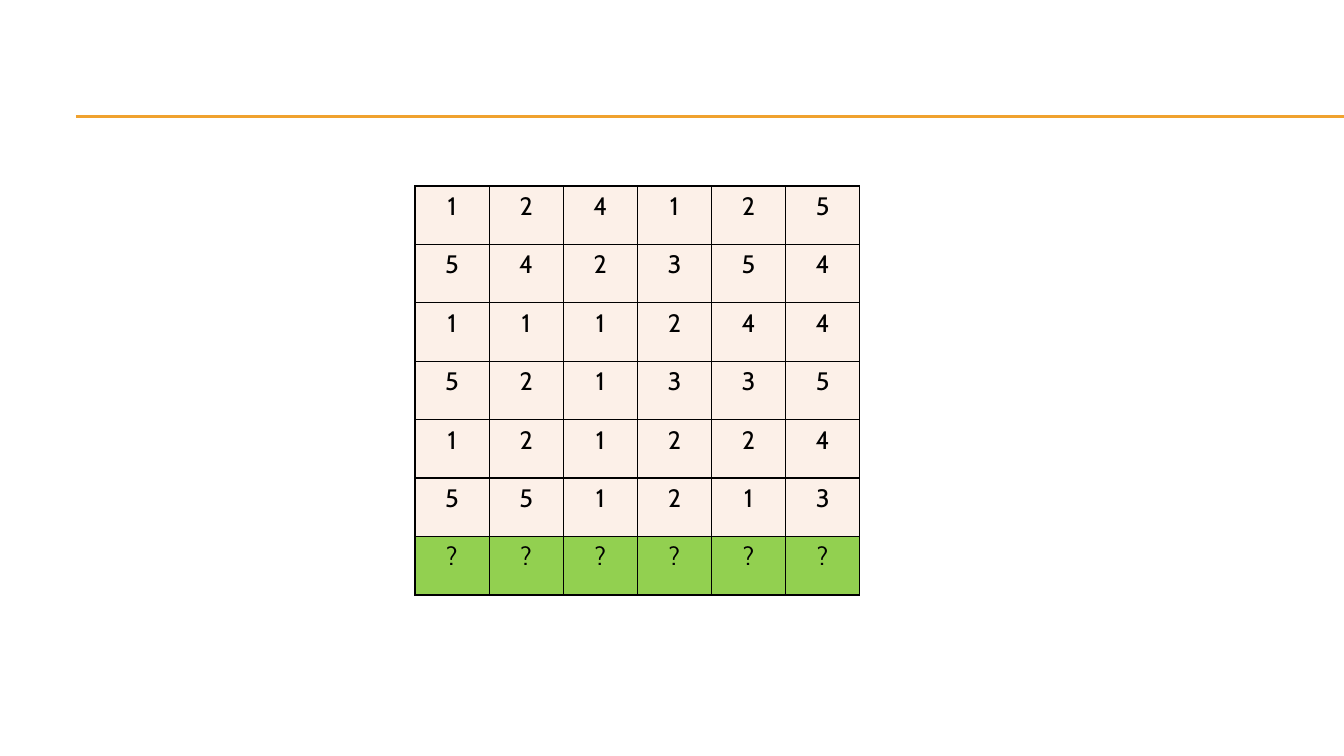
from dataclasses import dataclass

import pptx
import pptx.dml.color
import pptx.enum.shapes
import pptx.enum.text
import pptx.oxml
import pptx.oxml.ns
import pptx.shapes.connector
import pptx.slide
import pptx.table
import pptx.util

EMU_PER_PX = 914400 / 100.8
SLIDE_W, SLIDE_H = 1344, 756
COLORS = {"rule": "F0A22E", "ink": "000000", "data": "FCF0E8", "unknown": "92D050"}
FONT = "Cabin"


@dataclass(frozen=True)
class Rule:
    left: int
    right: int
    y: int


@dataclass(frozen=True)
class Row:
    values: str
    fill: str = "data"


RULES = [Rule(76, SLIDE_W, 116), Rule(76, SLIDE_W, 117)]
ROWS = [
    Row("124125"),
    Row("542354"),
    Row("111244"),
    Row("521335"),
    Row("121224"),
    Row("551213"),
    Row("??????", "unknown"),
]


def px(n: int) -> pptx.util.Emu:
    return pptx.util.Emu(round(n * EMU_PER_PX))


def rgb(name: str) -> pptx.dml.color.RGBColor:
    return pptx.dml.color.RGBColor.from_string(COLORS[name])


def draw_rule(slide: pptx.slide.Slide, rule: Rule) -> pptx.shapes.connector.Connector:
    sp = slide.shapes.add_connector(
        pptx.enum.shapes.MSO_CONNECTOR.STRAIGHT,
        px(rule.left), px(rule.y), px(rule.right), px(rule.y),
    )
    sp.line.color.rgb = rgb("rule")
    sp.line.width = pptx.util.Pt(0.75)
    sp._element.spPr.append(pptx.oxml.parse_xml(
        f'<a:effectLst {pptx.oxml.ns.nsdecls("a")}/>'))
    return sp


def draw_borders(cell: pptx.table._Cell) -> None:
    tcPr = cell._tc.get_or_add_tcPr()
    for side in "LRTB":
        tcPr.append(pptx.oxml.parse_xml(
            f'<a:ln{side} {pptx.oxml.ns.nsdecls("a")} w="{pptx.util.Pt(1)}">'
            f'<a:solidFill><a:srgbClr val="{COLORS["ink"]}"/></a:solidFill>'
            f'</a:ln{side}>'))


def fill_cell(cell: pptx.table._Cell, text: str, fill: str) -> None:
    draw_borders(cell)
    cell.fill.solid()
    cell.fill.fore_color.rgb = rgb(fill)
    p = cell.text_frame.paragraphs[0]
    p.text = text
    p.alignment = pptx.enum.text.PP_ALIGN.CENTER
    p.font.name = FONT
    p.font.size = pptx.util.Pt(18)
    p.font.color.rgb = rgb("ink")


def draw_grid(slide: pptx.slide.Slide, rows: list[Row]) -> pptx.table.Table:
    table = slide.shapes.add_table(
        len(rows), len(rows[0].values), px(415), px(186), px(445), px(409)).table
    table.first_row = False
    table.horz_banding = False
    for i, row in enumerate(rows):
        for j, value in enumerate(row.values):
            fill_cell(table.cell(i, j), value, row.fill)
    return table


def main() -> None:
    prs = pptx.Presentation()
    prs.slide_width, prs.slide_height = px(SLIDE_W), px(SLIDE_H)
    slide = prs.slides.add_slide(prs.slide_layouts[6])
    for rule in RULES:
        draw_rule(slide, rule)
    draw_grid(slide, ROWS)
    prs.save("out.pptx")


if __name__ == "__main__":
    main()
